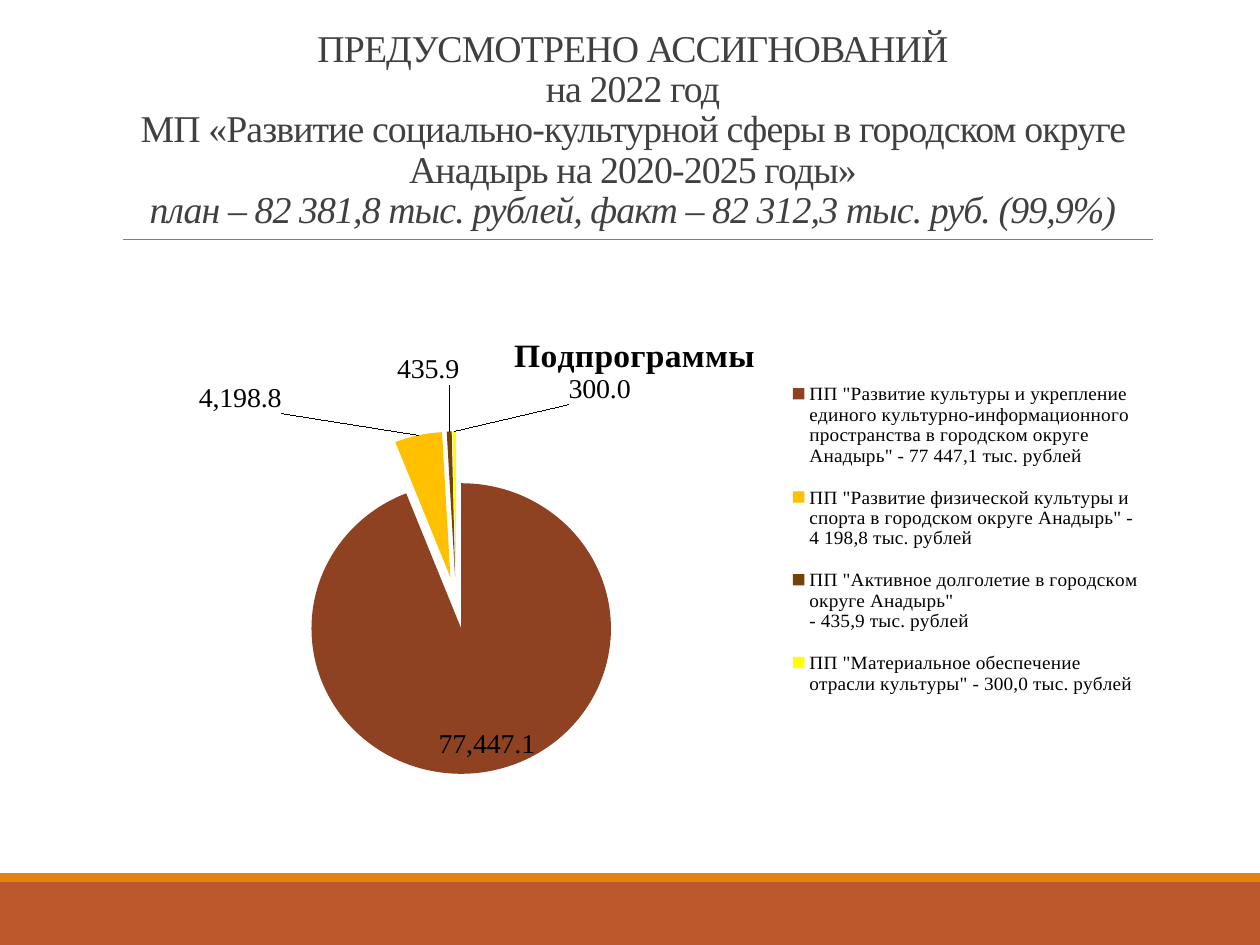
from dataclasses import dataclass

from lxml.etree import SubElement
from pptx import Presentation
from pptx.chart.data import CategoryChartData
from pptx.dml.color import RGBColor
from pptx.enum.chart import XL_CHART_TYPE as ChartType
from pptx.enum.chart import XL_LABEL_POSITION as LabelPos
from pptx.enum.chart import XL_LEGEND_POSITION as LegendPos
from pptx.enum.shapes import MSO_CONNECTOR as Connector
from pptx.enum.shapes import MSO_SHAPE as Shape
from pptx.enum.text import MSO_ANCHOR as Anchor
from pptx.enum.text import PP_ALIGN as Align
from pptx.oxml.ns import qn
from pptx.util import Emu, Pt

FONT = "Times New Roman"
NUM_FMT = "#,##0.0"
COLORS = {
    "band": "BD582C", "stripe": "E48312", "rule": "808080",
    "title": "404040", "text": "000000",
    "brown": "8E4221", "gold": "FFC000", "dark": "724209", "yellow": "FFFF00",
}


@dataclass
class Band:
    top: int
    height: int
    color: str


@dataclass
class Subprogram:
    name: str
    value: float
    color: str
    label_dx: float
    label_dy: float


BANDS = [Band(882, 63, "band"), Band(873, 9, "stripe")]
HEADING = [
    ("ПРЕДУСМОТРЕНО АССИГНОВАНИЙ", False),
    ("на 2022 год", False),
    ("МП «Развитие социально-культурной сферы в городском округе "
     "Анадырь на 2020-2025 годы»", False),
    ("план – 82 381,8 тыс. рублей, факт – 82 312,3 тыс. руб. (99,9%)", True),
]
SUBPROGRAMS = [
    Subprogram('ПП "Развитие культуры и укрепление единого культурно-информационного '
               'пространства в городском округе Анадырь" - 77 447,1 тыс. рублей',
               77447.1, "brown", -0.05, -0.1),
    Subprogram('ПП "Развитие физической культуры и спорта в городском округе Анадырь"'
               ' - 4 198,8 тыс. рублей', 4198.8, "gold", -0.13, -0.03),
    Subprogram('ПП "Активное долголетие в городском округе Анадырь"\n'
               '- 435,9 тыс. рублей', 435.9, "dark", -0.02, -0.08),
    Subprogram('ПП "Материальное обеспечение отрасли культуры" - 300,0 тыс. рублей',
               300.0, "yellow", 0.14, -0.04),
]


def px(n: int) -> Emu:
    return Emu(round(n * 914400 / 126))


def rgb(name: str) -> RGBColor:
    return RGBColor.from_string(COLORS[name])


def set_font(font, size: float, color: str = "text", bold=False, italic=False) -> None:
    font.name, font.size = FONT, Pt(size)
    font.bold, font.italic = bold, italic
    font.color.rgb = rgb(color)


def add_band(s, band: Band) -> None:
    sp = s.shapes.add_shape(Shape.RECTANGLE, 0, px(band.top), px(1260), px(band.height))
    sp.shadow.inherit = False
    sp.fill.solid()
    sp.fill.fore_color.rgb = rgb(band.color)
    sp.line.fill.background()


def add_rule(s) -> None:
    line = s.shapes.add_connector(Connector.STRAIGHT, px(123), px(239), px(1153), px(239))
    line.line.color.rgb = rgb("rule")
    line.line.width = Pt(0.5)
    SubElement(line._element.spPr, qn("a:effectLst"))


def add_heading(s) -> None:
    tf = s.shapes.add_textbox(px(113), px(30), px(1040), px(200)).text_frame
    tf.word_wrap = True
    tf.vertical_anchor = Anchor.TOP
    tf.margin_top = tf.margin_bottom = 0
    p = tf.paragraphs[0]
    p.alignment = Align.CENTER
    p.line_spacing = 0.89
    for i, (text, italic) in enumerate(HEADING):
        if i:
            p.add_line_break()
        r = p.add_run()
        r.text = text
        set_font(r.font, 21.6, "title", italic=italic)
        r._r.get_or_add_rPr().set("spc", "-50")


def place(parent, after: str, **fractions: float) -> None:
    """Give a chart part a manual layout, right after the named child."""
    for old in parent.findall(qn("c:layout")):
        parent.remove(old)
    layout = SubElement(parent, qn("c:layout"))
    manual = SubElement(layout, qn("c:manualLayout"))
    if after == "":
        parent.insert(0, layout)
        SubElement(manual, qn("c:layoutTarget")).set("val", "inner")
    else:
        parent.find(qn(after)).addnext(layout)
    if after != "c:idx":
        for mode in ("xMode", "yMode"):
            SubElement(manual, qn(f"c:{mode}")).set("val", "edge")
    for key, value in fractions.items():
        SubElement(manual, qn(f"c:{key}")).set("val", str(value))


def style_point(series, index: int, item: Subprogram) -> None:
    point = series.points[index]
    point.format.fill.solid()
    point.format.fill.fore_color.rgb = rgb(item.color)
    label = point.data_label
    set_font(label.font, 16)
    label.position = LabelPos.OUTSIDE_END
    node = series.data_labels._element.findall(qn("c:dLbl"))[index]
    place(node, "c:idx", x=item.label_dx, y=item.label_dy)
    fmt = SubElement(node, qn("c:numFmt"))
    fmt.set("formatCode", NUM_FMT)
    fmt.set("sourceLinked", "0")
    node.find(qn("c:layout")).addnext(fmt)


def add_pie(s) -> None:
    data = CategoryChartData(number_format=NUM_FMT)
    data.categories = [item.name for item in SUBPROGRAMS]
    data.add_series("Подпрограммы", [item.value for item in SUBPROGRAMS])
    chart = s.shapes.add_chart(ChartType.PIE, px(113), px(304), px(1040), px(505),
                               data).chart
    set_font(chart.font, 16)

    chart.has_title = True
    r = chart.chart_title.text_frame.paragraphs[0].add_run()
    r.text = "Подпрограммы"
    set_font(r.font, 19.2, bold=True)
    chart.chart_title.include_in_layout = False
    place(chart.chart_title._element, "c:tx", x=0.38, y=0.05)

    chart.has_legend = True
    legend = chart.legend
    legend.position = LegendPos.RIGHT
    legend.include_in_layout = False
    set_font(legend.font, 11)
    place(legend._element, "c:legendPos", x=0.65, y=0.12, w=0.34, h=0.72)

    plot = chart.plots[0]
    plot.vary_by_categories = True
    series = plot.series[0]
    labels = series.data_labels
    labels.show_value = True
    labels.number_format = NUM_FMT
    labels.number_format_is_linked = False
    set_font(labels.font, 16)
    for i, item in enumerate(SUBPROGRAMS):
        style_point(series, i, item)
    explosion = SubElement(series._element, qn("c:explosion"))
    explosion.set("val", "18")
    series._element.find(qn("c:dPt")).addprevious(explosion)
    place(chart._chartSpace.chart.plotArea, "", x=0.16, y=0.26, w=0.34, h=0.7)


def main() -> None:
    prs = Presentation()
    prs.slide_width, prs.slide_height = px(1260), px(945)
    s = prs.slides.add_slide(prs.slide_layouts[6])
    for band in BANDS:
        add_band(s, band)
    add_rule(s)
    add_heading(s)
    add_pie(s)
    prs.save("out.pptx")


if __name__ == "__main__":
    main()
